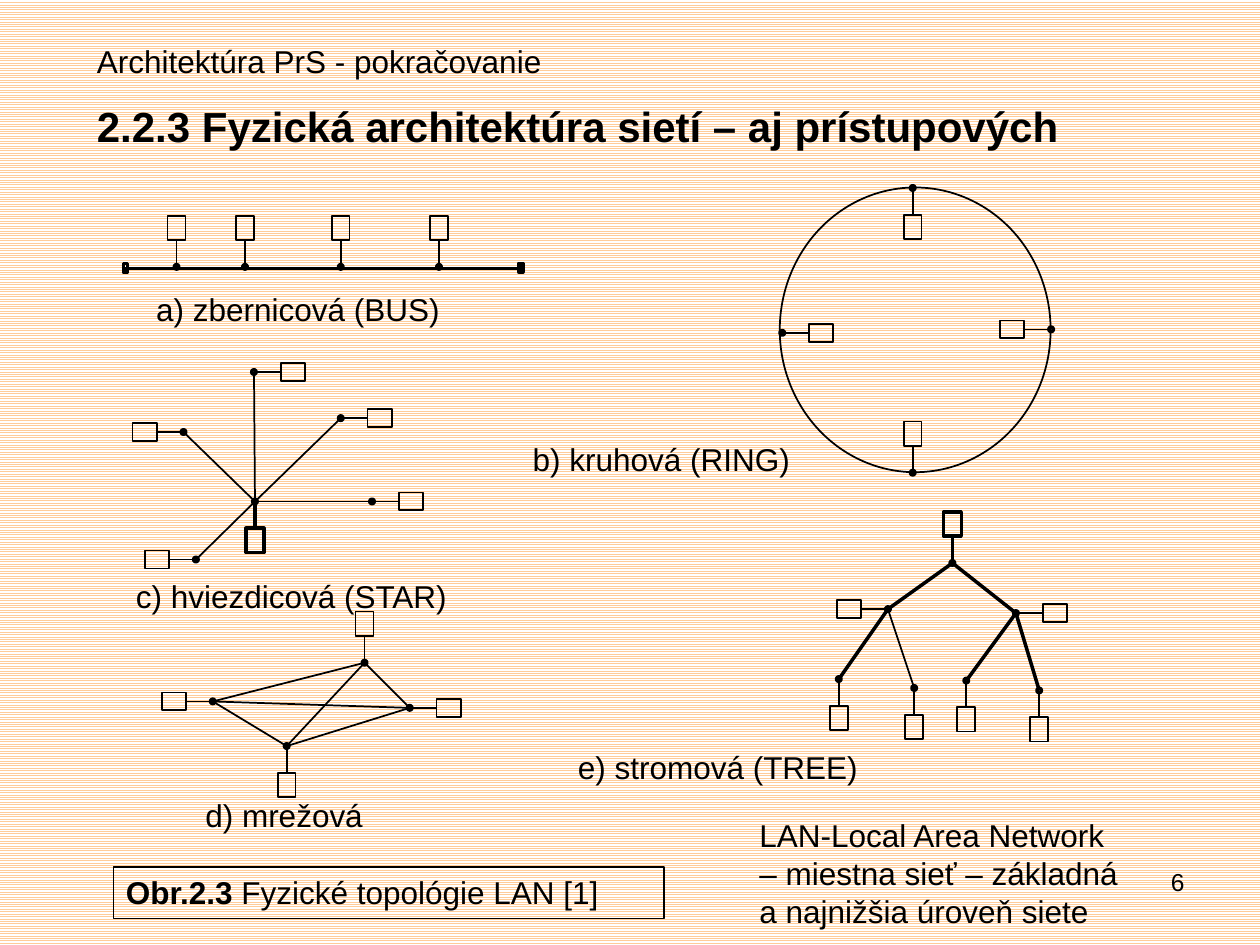
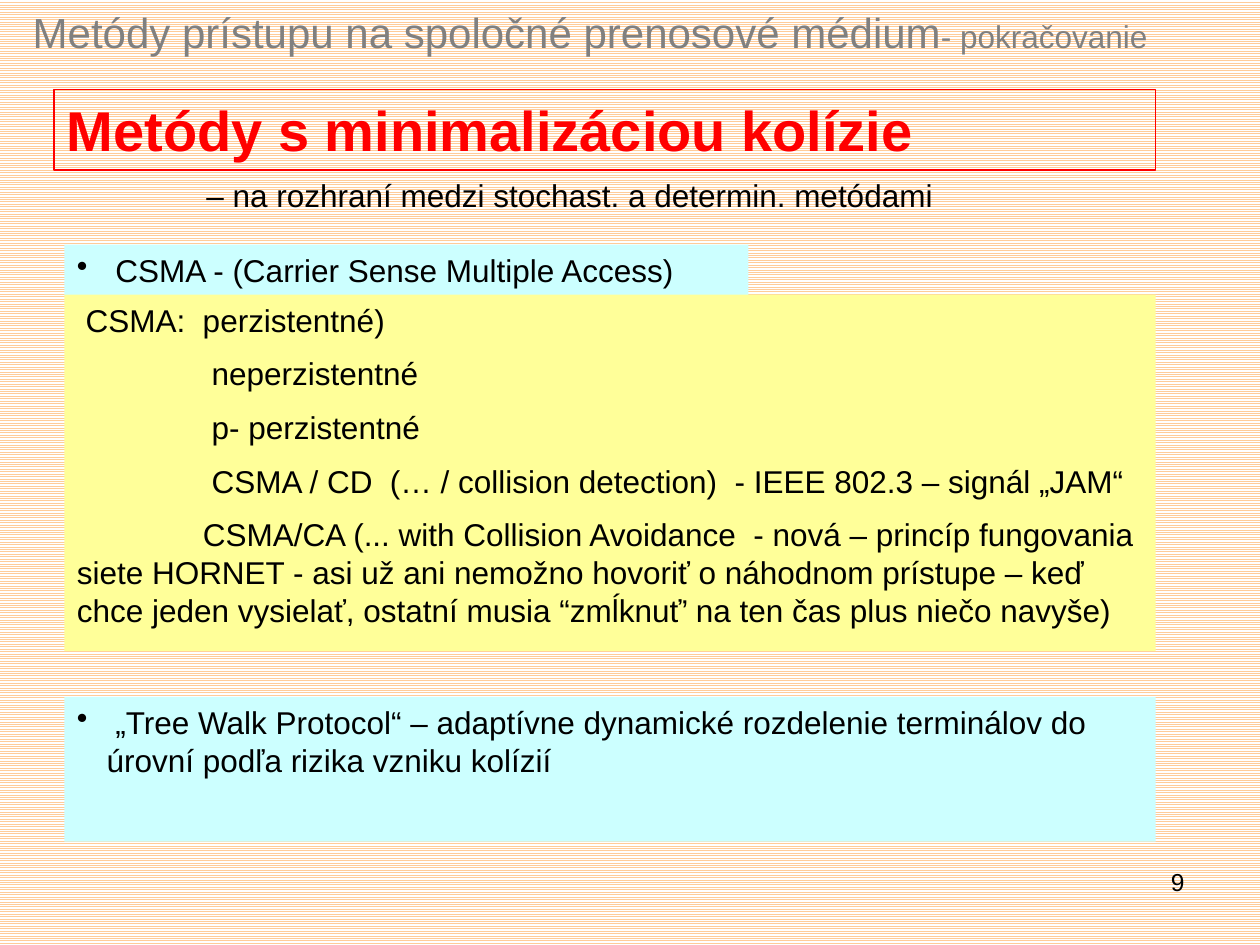
"""Builds two slides on LAN topologies and collision-minimising access methods."""
from itertools import combinations

from lxml import etree
from pptx import Presentation
from pptx.dml.color import RGBColor
from pptx.enum.dml import MSO_PATTERN
from pptx.enum.shapes import MSO_CONNECTOR, MSO_SHAPE
from pptx.enum.text import MSO_ANCHOR, MSO_AUTO_SIZE, PP_ALIGN
from pptx.oxml.ns import qn
from pptx.util import Cm, Pt

STRIPES = MSO_PATTERN.LIGHT_HORIZONTAL
STRAIGHT = MSO_CONNECTOR.STRAIGHT
RECT, OVAL = MSO_SHAPE.RECTANGLE, MSO_SHAPE.OVAL
TOP, NO_FIT = MSO_ANCHOR.TOP, MSO_AUTO_SIZE.NONE
LEFT, RIGHT = PP_ALIGN.LEFT, PP_ALIGN.RIGHT

FONT = "Arial"
BLACK = RGBColor(0x00, 0x00, 0x00)
WHITE = RGBColor(0xFF, 0xFF, 0xFF)
RED = RGBColor(0xFF, 0x00, 0x00)
GREY = RGBColor(0x80, 0x80, 0x80)
PEACH = RGBColor(0xFF, 0xCC, 0x99)
CYAN = RGBColor(0xCC, 0xFF, 0xFF)
YELLOW = RGBColor(0xFF, 0xFF, 0x99)
THIN, THICK = 1, 2
TITLE_ONLY = 5


def write(box, lines, size=18, color=BLACK, align=LEFT, bold=False):
    """Fill a box with paragraphs in the shared text style."""
    frame = box.text_frame
    frame.word_wrap = True
    frame.auto_size = NO_FIT
    frame.vertical_anchor = TOP
    frame.text = "\n".join(lines)
    for i, paragraph in enumerate(frame.paragraphs):
        paragraph.alignment = align
        paragraph.space_before = Pt(size / 2 if i else 0)
        paragraph.font.name = FONT
        paragraph.font.size = Pt(size)
        paragraph.font.bold = bold
        paragraph.font.color.rgb = color
    return frame.paragraphs


def add_text(slide, place, lines, **style):
    """Add a text box at a place in centimetres and return it with its paragraphs."""
    box = slide.shapes.add_textbox(*[Cm(v) for v in place])
    return box, write(box, lines, **style)


prs = Presentation()
prs.slide_width, prs.slide_height = Cm(25.4), Cm(19.05)

slides = []
for page_number in ("6", "9"):
    slide = prs.slides.add_slide(prs.slide_layouts[TITLE_ONLY])
    background = slide.background.fill
    background.patterned()
    background.pattern = STRIPES
    background.fore_color.rgb = PEACH
    background.back_color.rgb = WHITE
    add_text(slide, (18.21, 17.35, 5.92, 1.32), [page_number], size=14, align=RIGHT)
    slides.append(slide)
topologies, methods = slides

heading = topologies.shapes.title
heading.left, heading.top, heading.width, heading.height = Cm(1.7), Cm(0.71), Cm(21.41), Cm(2.54)
chapter, section = write(heading, [
    "Architektúra PrS - pokračovanie",
    "2.2.3 Fyzická architektúra sietí – aj prístupových",
])
section.font.size = Pt(24)
section.font.bold = True
section.space_before = Pt(12)

UP, DOWN, WEST, EAST = (0, -1), (0, 1), (-1, 0), (1, 0)
LINK, STATION_LENGTH, STATION_WIDTH = 0.54, 0.49, 0.36

bus_taps = [(x, 5.38) for x in (3.56, 4.94, 6.87, 8.85)]
hub = (5.14, 10.11)
star_ends = {(5.12, 7.5): EAST, (6.87, 8.43): EAST, (7.5, 10.11): EAST,
             (3.7, 8.71): WEST, (3.95, 11.28): WEST}
ring_taps = {(18.4, 3.79): DOWN, (15.77, 6.71): EAST,
             (18.4, 9.53): UP, (21.19, 6.64): WEST}
mesh_nodes = {(7.35, 13.36): UP, (4.29, 14.14): WEST,
              (5.78, 15.04): DOWN, (8.26, 14.27): EAST}
root, left_branch, right_branch = (19.2, 11.35), (17.9, 12.28), (20.48, 12.36)
leaves = [(16.91, 13.69), (18.43, 13.87), (19.48, 13.72), (20.95, 13.92)]

nodes = [(tap, UP, THIN) for tap in bus_taps]
nodes += [(node, way, THIN) for group in (star_ends, ring_taps, mesh_nodes)
          for node, way in group.items()]
nodes += [(leaf, DOWN, THIN) for leaf in leaves]
nodes += [(hub, DOWN, THICK), (root, UP, THICK),
          (left_branch, WEST, THIN), (right_branch, EAST, THIN)]

cables = [((2.49, 5.41), (10.46, 5.41), THICK)]
cables += [(hub, end, THIN) for end in star_ends]
cables += [(a, b, THIN) for a, b in combinations(mesh_nodes, 2)]
cables += [(root, left_branch, THICK), (root, right_branch, THICK),
           (left_branch, leaves[0], THICK), (left_branch, leaves[1], THIN),
           (right_branch, leaves[2], THICK), (right_branch, leaves[3], THICK)]

outlines = [(OVAL, 18.45, 6.65, 5.46, 5.74, THIN)]
outlines += [(RECT, x, 5.4, 0.08, 0.18, THICK) for x in (2.53, 10.5)]
for (x, y), (dx, dy), weight in nodes:
    cables.append(((x, y), (x + dx * LINK, y + dy * LINK), weight))
    reach = LINK + STATION_LENGTH / 2
    size = (STATION_LENGTH, STATION_WIDTH) if dx else (STATION_WIDTH, STATION_LENGTH)
    outlines.append((RECT, x + dx * reach, y + dy * reach, *size, weight))
    outlines.append((OVAL, x, y, 0.09, 0.09, THICK))

for start, end, weight in cables:
    cable = topologies.shapes.add_connector(STRAIGHT, *[Cm(v) for v in start + end])
    cable.line.color.rgb = BLACK
    cable.line.width = Pt(weight)
    etree.SubElement(cable._element.spPr, qn("a:effectLst"))

for kind, x, y, width, height, weight in outlines:
    outline = topologies.shapes.add_shape(
        kind, Cm(x - width / 2), Cm(y - height / 2), Cm(width), Cm(height))
    outline.shadow.inherit = False
    outline.fill.background()
    outline.line.color.rgb = BLACK
    outline.line.width = Pt(weight)

for x, y, width, caption in (
    (2.9, 5.72, 6.71, "a) zbernicová (BUS)"),
    (10.49, 8.74, 6.99, "b) kruhová (RING)"),
    (2.49, 11.51, 7.37, "c) hviezdicová (STAR)"),
    (3.89, 15.93, 4.39, "d) mrežová"),
    (11.4, 14.96, 7.21, "e) stromová (TREE)"),
    (15.06, 16.33, 7.9,
     "LAN-Local Area Network – miestna sieť – základná a najnižšia úroveň siete"),
):
    add_text(topologies, (x, y, width, 1.02), [caption])

figure, (figure_label,) = add_text(topologies, (2.29, 17.48, 11.1, 1.04), ["Obr.2.3 "])
figure.line.color.rgb = BLACK
figure.line.width = Pt(0.75)
figure_label.runs[0].font.bold = True
figure_label.add_run().text = "Fyzické topológie LAN [1]"

running_head, (chapter_name,) = add_text(
    methods, (0.41, 0, 23.22, 1.27),
    ["Metódy prístupu na spoločné prenosové médium"], size=24, color=GREY)
continuation = chapter_name.add_run()
continuation.text = "- pokračovanie"
continuation.font.size = Pt(18)

method_title = methods.shapes.title
method_title.left, method_title.top = Cm(1.09), Cm(1.8)
method_title.width, method_title.height = Cm(22.2), Cm(1.63)
method_title.line.color.rgb = RED
method_title.line.width = Pt(0.75)
write(method_title, ["Metódy s minimalizáciou kolízie"], size=32, color=RED, bold=True)

add_text(methods, (3.91, 3.43, 19, 1.02),
         ["– na rozhraní medzi stochast. a determin. metódami"])

for place, protocol in (
    ((1.3, 4.93, 13.79, 1.02), " CSMA - (Carrier Sense Multiple Access)"),
    ((1.3, 14.05, 22, 2.92), " „Tree Walk Protocol“ – adaptívne dynamické rozdelenie "
                             "terminálov do úrovní podľa rizika vzniku kolízií"),
):
    panel, (bullet_line,) = add_text(methods, place, [protocol])
    panel.fill.solid()
    panel.fill.fore_color.rgb = CYAN
    properties = bullet_line._p.get_or_add_pPr()
    properties.set("marL", str(Cm(0.6)))
    properties.set("indent", str(Cm(-0.6)))
    bullet = etree.Element(qn("a:buChar"), char="•")
    properties.find(qn("a:defRPr")).addprevious(bullet)

variants_panel, variants = add_text(methods, (1.3, 5.94, 22, 7.19), [
    " CSMA:  perzistentné)",
    " neperzistentné",
    " p- perzistentné",
    " CSMA / CD  (… / collision detection)  - IEEE 802.3 – signál „JAM“",
    "CSMA/CA (... with Collision Avoidance  - nová – princíp fungovania siete HORNET"
    " - asi už ani nemožno hovoriť o náhodnom prístupe – keď chce jeden vysielať,"
    " ostatní musia “zmĺknuť’ na ten čas plus niečo navyše)",
])
variants_panel.fill.solid()
variants_panel.fill.fore_color.rgb = YELLOW
for variant in variants[1:]:
    variant._p.get_or_add_pPr().set("indent", str(Cm(2.54)))

prs.save("out.pptx")
